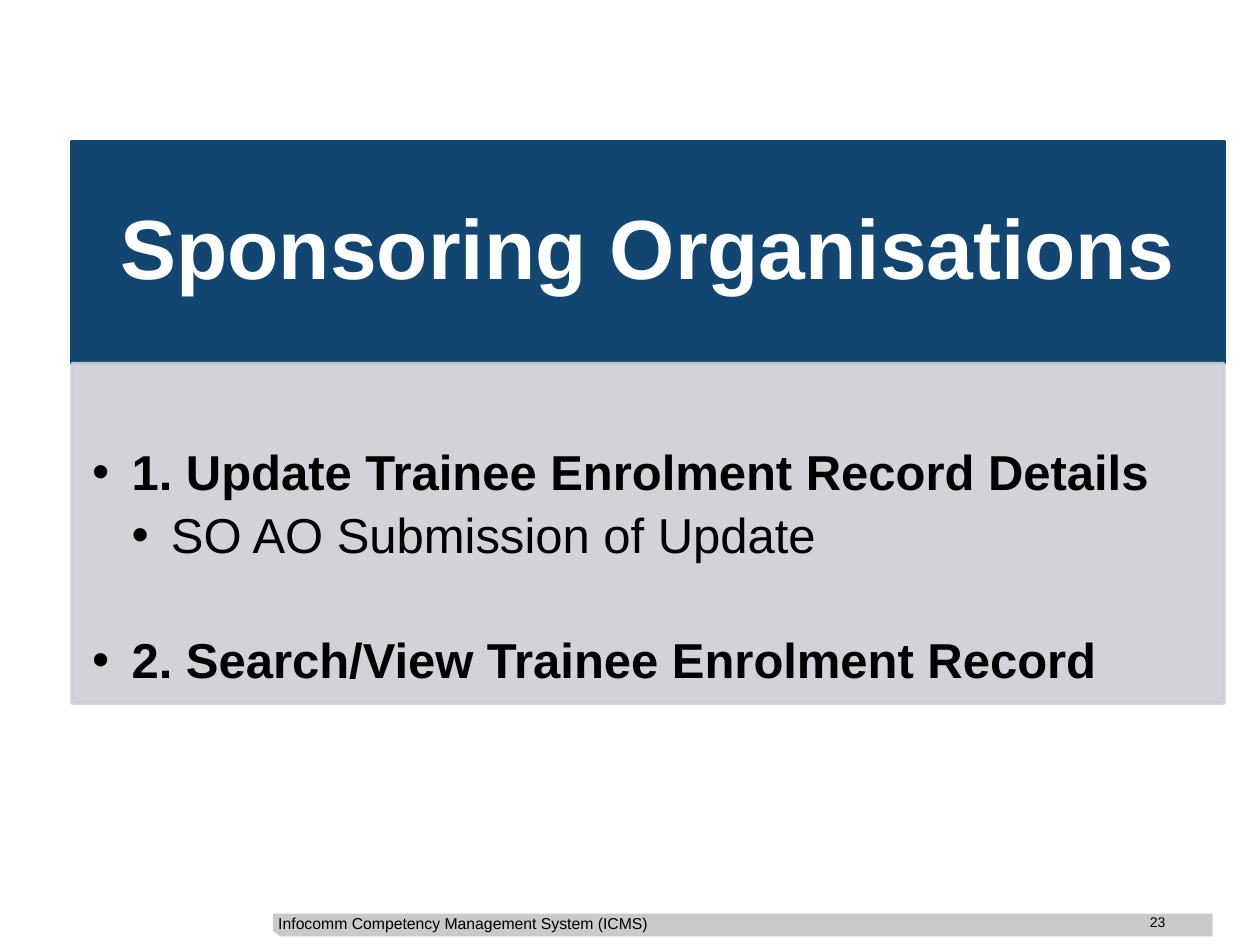
from lxml import etree
from pptx import Presentation
from pptx.dml.color import RGBColor
from pptx.enum.text import MSO_ANCHOR, MSO_AUTO_SIZE, PP_ALIGN
from pptx.oxml.ns import qn
from pptx.util import Pt

CENTER, RIGHT = PP_ALIGN.CENTER, PP_ALIGN.RIGHT
TOP, MIDDLE = MSO_ANCHOR.TOP, MSO_ANCHOR.MIDDLE
NO_FIT = MSO_AUTO_SIZE.NONE
TITLE_AND_CONTENT = 1

COLORS = {
    "navy": "124570",
    "panel": "CCCFD5",
    "footer": "CACACA",
    "white": "FFFFFF",
    "black": "000000",
}
PANEL_LEFT, PANEL_WIDTH = 41.2, 658.2
INDENT = 22.5
ITEMS = [
    ("1. Update Trainee Enrolment Record Details", 0, 0),
    ("SO AO Submission of Update", 1, 0),
    ("2. Search/View Trainee Enrolment Record", 0, 35),
]


def apply(target, values):
    for name, value in values.items():
        setattr(target, name, value)


def color(name):
    return RGBColor.from_string(COLORS[name])


def place(box, left, top, width, height):
    apply(box, {"left": Pt(left), "top": Pt(top),
                "width": Pt(width), "height": Pt(height)})


def paint(box, name, opacity=100):
    box.fill.solid()
    box.fill.fore_color.rgb = color(name)
    box.line.width = Pt(2)
    box.line.fill.solid()
    box.line.fill.fore_color.rgb = color(name)
    if opacity < 100:
        for tint in box._element.spPr.iter(qn("a:srgbClr")):
            etree.SubElement(tint, qn("a:alpha"), val=str(opacity * 1000))


def set_frame(box, anchor, left=0, top=0, right=0, bottom=0):
    frame = box.text_frame
    apply(frame, {"auto_size": NO_FIT, "word_wrap": True,
                  "vertical_anchor": anchor,
                  "margin_left": Pt(left), "margin_top": Pt(top),
                  "margin_right": Pt(right), "margin_bottom": Pt(bottom)})
    return frame


def write(para, text, size, name, bold=False, **layout):
    apply(para, layout)
    span = para.add_run()
    span.text = text
    apply(span.font, {"name": "Arial", "size": Pt(size), "bold": bold})
    span.font.color.rgb = color(name)


def add_bullet(para, level):
    properties = para._p.get_or_add_pPr()
    properties.set("marL", str(Pt(INDENT * (level + 1))))
    properties.set("indent", str(Pt(-INDENT)))
    etree.SubElement(properties, qn("a:buChar"), char="•")


def fill_title(box):
    place(box, PANEL_LEFT, 80.8, PANEL_WIDTH, 127)
    paint(box, "navy")
    frame = set_frame(box, MIDDLE, 26.5, 15, 26.5, 15)
    write(frame.paragraphs[0], "Sponsoring Organisations", 48, "white", True,
          alignment=CENTER, line_spacing=0.9)


def fill_list(box):
    place(box, PANEL_LEFT, 207.8, PANEL_WIDTH, 194)
    paint(box, "panel", 90)
    frame = set_frame(box, TOP, 11.5, 48, 16, 17)
    for index, (text, level, before) in enumerate(ITEMS):
        para = frame.add_paragraph() if index else frame.paragraphs[0]
        add_bullet(para, level)
        write(para, text, 28, "black", level == 0, level=level,
              line_spacing=0.9, space_before=Pt(before), space_after=Pt(6))


def add_footer_band(page):
    left, top, right, bottom = 156, 522, 693, 535
    builder = page.shapes.build_freeform(left, top, scale=Pt(1))
    builder.add_line_segments([(left, bottom - 3.5), (left + 3.5, bottom),
                               (right, bottom), (right, top)], close=True)
    band = builder.convert_to_shape()
    band.shadow.inherit = False
    band.fill.solid()
    band.fill.fore_color.rgb = color("footer")
    band.line.fill.background()


def add_label(page, text, bounds, size, anchor, **layout):
    box = page.shapes.add_textbox(*(Pt(value) for value in bounds))
    frame = set_frame(box, anchor)
    write(frame.paragraphs[0], text, size, "black", **layout)


def main():
    deck = Presentation()
    apply(deck, {"slide_width": Pt(720), "slide_height": Pt(540)})
    page = deck.slides.add_slide(deck.slide_layouts[TITLE_AND_CONTENT])
    fill_title(page.shapes.title)
    fill_list(page.placeholders[1])
    add_footer_band(page)
    add_label(page, "Infocomm Competency Management System (ICMS)",
              (159, 522, 351, 11), 9, MIDDLE)
    add_label(page, "23", (648, 522, 18, 18), 8, TOP, alignment=RIGHT)
    deck.save("out.pptx")


if __name__ == "__main__":
    main()
